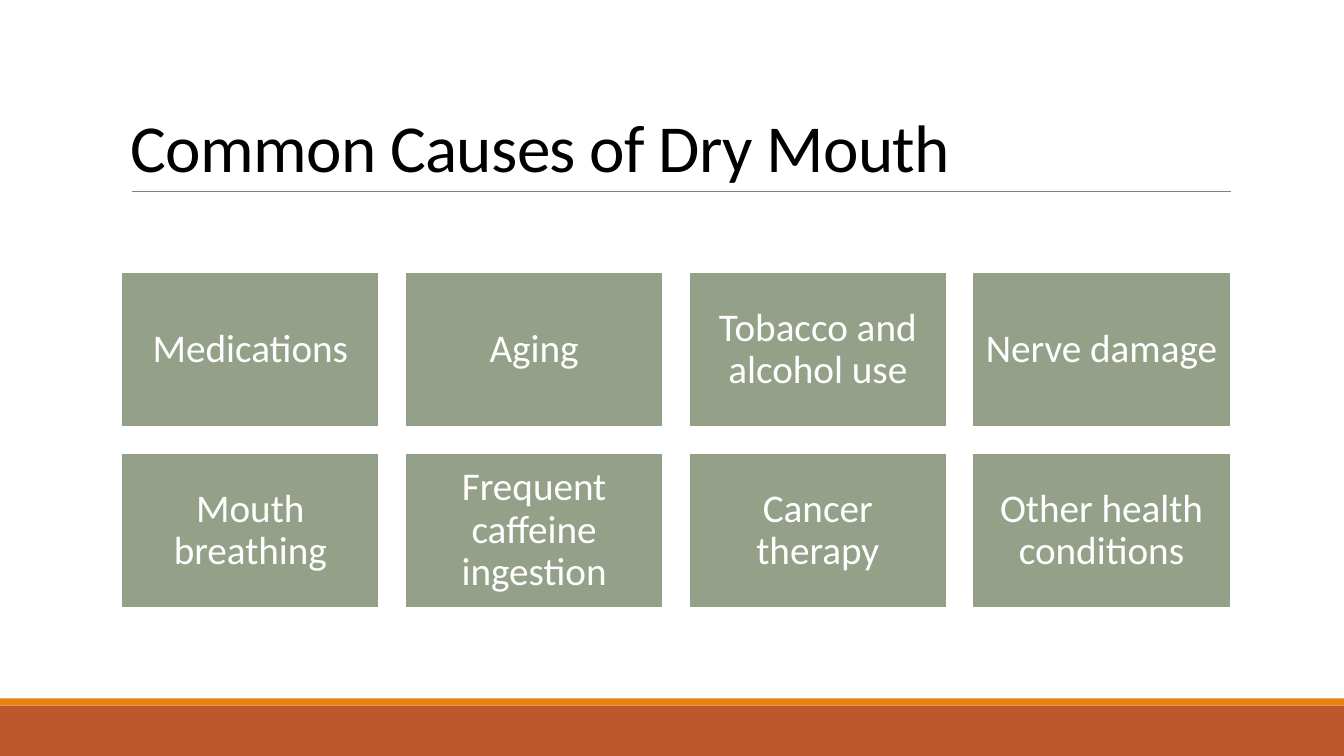
import dataclasses

import pptx
import pptx.dml.color
import pptx.enum.shapes
import pptx.enum.text
import pptx.oxml.ns
import pptx.util
from lxml import etree

Cm = pptx.util.Cm
Pt = pptx.util.Pt
Align = pptx.enum.text.PP_ALIGN
Anchor = pptx.enum.text.MSO_ANCHOR


@dataclasses.dataclass(frozen=True)
class Box:
    """A filled rectangle, in centimetres."""
    x: float
    y: float
    w: float
    h: float
    fill: str
    line: str = ""
    text: str = ""


def rgb(value: str) -> pptx.dml.color.RGBColor:
    return pptx.dml.color.RGBColor.from_string(value)


def add_run(p, text: str, size: float, color: str):
    r = p.add_run()
    r.text = text
    r.font.name = "Calibri"
    r.font.size = Pt(size)
    r.font.color.rgb = rgb(color)
    return r


def draw_box(s, box: Box) -> None:
    sp = s.shapes.add_shape(pptx.enum.shapes.MSO_SHAPE.RECTANGLE,
                            Cm(box.x), Cm(box.y), Cm(box.w), Cm(box.h))
    sp.shadow.inherit = False
    sp.fill.solid()
    sp.fill.fore_color.rgb = rgb(box.fill)
    if box.line:
        sp.line.color.rgb = rgb(box.line)
        sp.line.width = Pt(1.25)
    else:
        sp.line.fill.background()
    if box.text:
        tf = sp.text_frame
        tf.word_wrap = True
        tf.vertical_anchor = Anchor.MIDDLE
        tf.margin_left = tf.margin_right = Cm(0.3)
        tf.margin_top = tf.margin_bottom = Cm(0.3)
        p = tf.paragraphs[0]
        p.alignment = Align.CENTER
        p.line_spacing = 0.9
        add_run(p, box.text, 28, "FFFFFF")


def draw_title(s, text: str) -> None:
    sp = s.shapes.add_textbox(Cm(3.05), Cm(0.79), Cm(27.94), Cm(4.03))
    tf = sp.text_frame
    tf.word_wrap = True
    tf.vertical_anchor = Anchor.BOTTOM
    p = tf.paragraphs[0]
    p.line_spacing = 0.85
    r = add_run(p, text, 48, "000000")
    r.font._element.set("spc", "-50")


def draw_rule(s, x1: float, x2: float, y: float) -> None:
    line = s.shapes.add_connector(pptx.enum.shapes.MSO_CONNECTOR.STRAIGHT,
                                  Cm(x1), Cm(y), Cm(x2), Cm(y))
    line.line.color.rgb = rgb("808080")
    line.line.width = Pt(0.5)
    etree.SubElement(line._element.spPr, pptx.oxml.ns.qn("a:effectLst"))


FOOTER_BARS = [
    Box(0, 17.78, 33.87, 1.27, "BD582C"),
    Box(0, 17.6, 33.87, 0.18, "E48312"),
]
CAUSES = [
    ["Medications", "Aging", "Tobacco and alcohol use", "Nerve damage"],
    ["Mouth breathing", "Frequent caffeine ingestion", "Cancer therapy",
     "Other health conditions"],
]
LEFT, TOP, WIDTH, HEIGHT, GAP = 3.06, 6.87, 6.5, 3.9, 0.65


def main() -> None:
    prs = pptx.Presentation()
    prs.slide_width, prs.slide_height = Cm(33.87), Cm(19.05)
    s = prs.slides.add_slide(prs.slide_layouts[6])

    # Footer bars
    for bar in FOOTER_BARS:
        draw_box(s, bar)

    # Title and rule
    draw_rule(s, 3.33, 31.01, 4.83)
    draw_title(s, "Common Causes of Dry Mouth")

    # Grid of causes
    for row, texts in enumerate(CAUSES):
        for col, text in enumerate(texts):
            draw_box(s, Box(LEFT + col * (WIDTH + GAP),
                            TOP + row * (HEIGHT + GAP),
                            WIDTH, HEIGHT, "94A088", "FFFFFF", text))

    prs.save("out.pptx")


if __name__ == "__main__":
    main()
